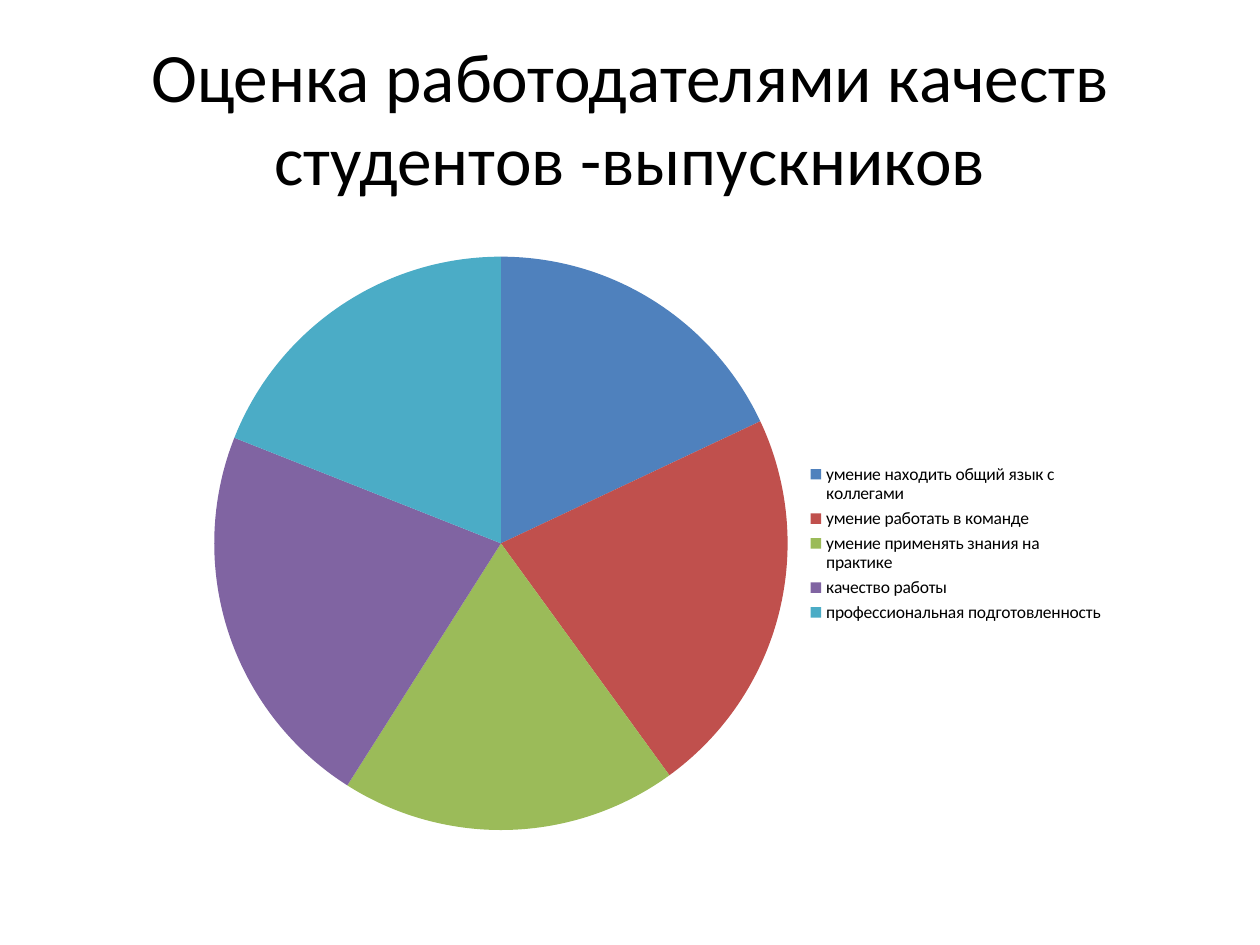
from pptx import Presentation
from pptx.chart.data import CategoryChartData
from pptx.dml.color import RGBColor
from pptx.enum.chart import XL_CHART_TYPE as ChartType, XL_LEGEND_POSITION as LegendPosition
from pptx.enum.text import MSO_ANCHOR as Anchor, PP_ALIGN as Align
from pptx.util import Pt

FONT = "Calibri"
BLACK = RGBColor(0x00, 0x00, 0x00)
BLUE = RGBColor(0x4F, 0x81, 0xBD)
RED = RGBColor(0xC0, 0x50, 0x4D)
GREEN = RGBColor(0x9B, 0xBB, 0x59)
PURPLE = RGBColor(0x80, 0x64, 0xA2)
TEAL = RGBColor(0x4B, 0xAC, 0xC6)

TITLE = "Оценка работодателями качеств студентов -выпускников"

# Quality, share in percent, slice colour
QUALITIES = [
    ("умение находить общий язык с коллегами", 18, BLUE),
    ("умение работать в команде", 22, RED),
    ("умение применять знания на практике", 19, GREEN),
    ("качество работы", 22, PURPLE),
    ("профессиональная подготовленность", 19, TEAL),
]


def set_font(font, size):
    font.name = FONT
    font.size = Pt(size)
    font.color.rgb = BLACK


def add_title(slide, text, left, top, width, height):
    box = slide.shapes.add_textbox(Pt(left), Pt(top), Pt(width), Pt(height))
    frame = box.text_frame
    frame.word_wrap = True
    frame.vertical_anchor = Anchor.MIDDLE
    paragraph = frame.paragraphs[0]
    paragraph.text = text
    paragraph.alignment = Align.CENTER
    set_font(paragraph.font, 39.6)


def add_pie(slide, qualities, left, top, width, height):
    names, shares, colours = zip(*qualities)
    data = CategoryChartData()
    data.categories = names
    data.add_series("Series 1", shares)
    chart = slide.shapes.add_chart(
        ChartType.PIE, Pt(left), Pt(top), Pt(width), Pt(height), data).chart
    chart.has_title = False
    set_font(chart.font, 10)

    # Legend
    chart.has_legend = True
    chart.legend.position = LegendPosition.RIGHT
    chart.legend.include_in_layout = False

    # Slices
    plot = chart.plots[0]
    plot.vary_by_categories = True
    for index, colour in enumerate(colours):
        fill = plot.series[0].points[index].format.fill
        fill.solid()
        fill.fore_color.rgb = colour


def main():
    presentation = Presentation()
    presentation.slide_width = Pt(720)
    presentation.slide_height = Pt(540)
    slide = presentation.slides.add_slide(presentation.slide_layouts[6])
    add_title(slide, TITLE, 36, 21.6, 648, 90)
    add_pie(slide, QUALITIES, 112.5, 112.5, 525.6, 396)
    presentation.save("out.pptx")


if __name__ == "__main__":
    main()
